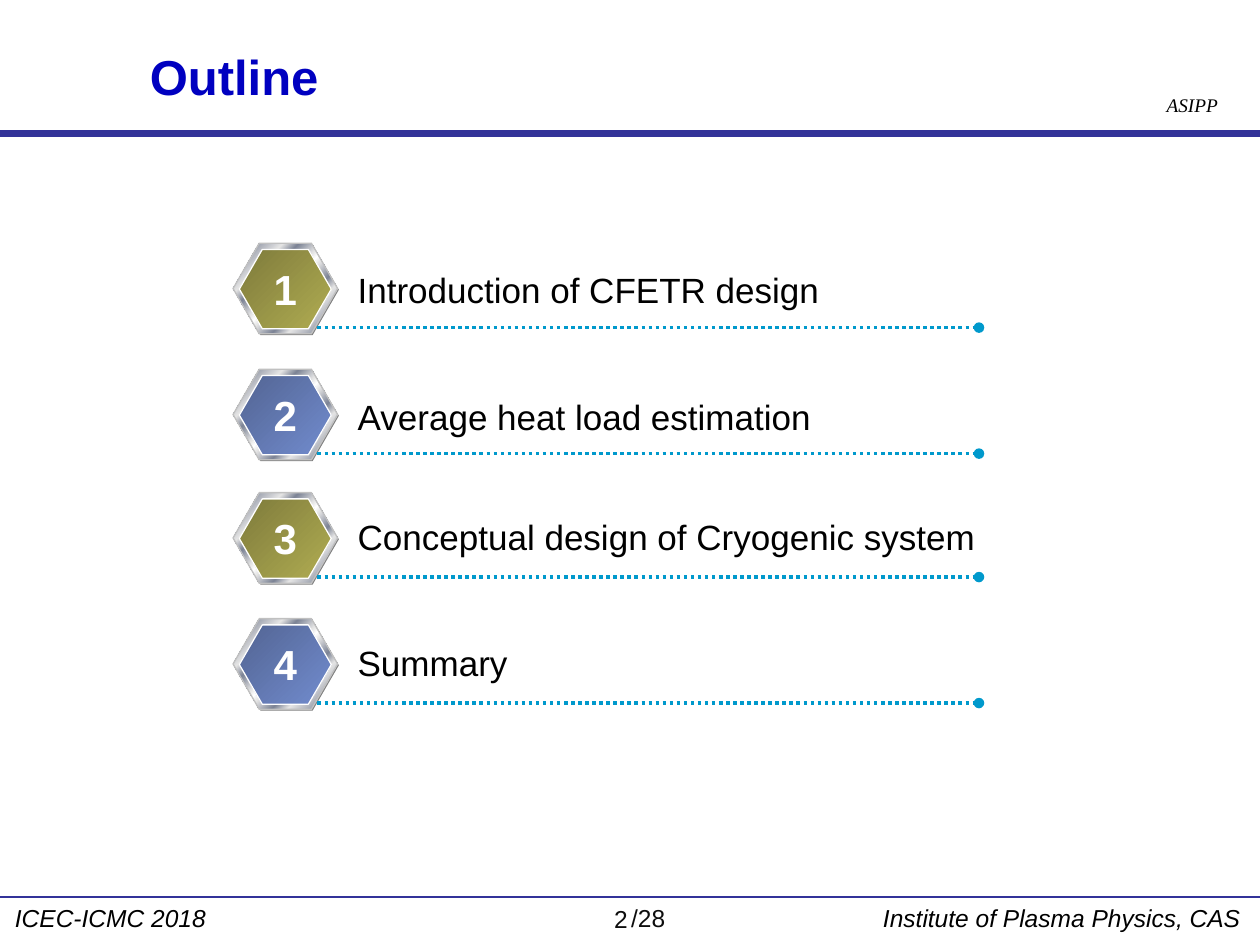
from lxml.etree import SubElement as Sub
from pptx import Presentation
from pptx.dml.color import RGBColor
from pptx.enum.dml import MSO_LINE as Dash
from pptx.enum.shapes import MSO_CONNECTOR as Conn, MSO_SHAPE as Shape
from pptx.enum.text import MSO_ANCHOR as Anchor, MSO_AUTO_SIZE as Fit, PP_ALIGN as Align
from pptx.oxml.ns import qn
from pptx.util import Inches, Pt

ROWS = [
    (1.93, 0.15, "Introduction of CFETR design", 3.9),
    (2.93, 0.16, "Average heat load estimation", 3.83),
    (3.91, 0.13, "Conceptual design of Cryogenic system", 5.14),
    (4.91, 0.13, "Summary", 1.4),
]
OLIVE = [(0, "7E7B3B"), (100, "B0AC52")]
BLUE = [(0, "526493"), (100, "728CCE")]
METAL = [
    (0, "E6E6E6"), (7, "7D8496"), (26, "E6E6E6"), (34, "7D8496"),
    (46, "E6E6E6"), (50, "FFFFFF"), (54, "E6E6E6"), (66, "7D8496"),
    (74, "E6E6E6"), (93, "7D8496"), (100, "E6E6E6"),
]


def rgb(code):
    """Turn a hex string into a colour."""
    return RGBColor.from_string(code)


def write(shape, text, size, color="000000", bold=False, italic=False,
          font="Arial", align=Align.LEFT, anchor=Anchor.TOP):
    """Put one formatted line of text in a shape."""
    frame = shape.text_frame
    frame.text = text
    frame.word_wrap = False
    frame.auto_size = Fit.SHAPE_TO_FIT_TEXT
    frame.vertical_anchor = anchor
    para = frame.paragraphs[0]
    para.alignment = align
    style = para.runs[0].font
    style.name, style.size = font, Pt(size)
    style.bold, style.italic = bold, italic
    style.color.rgb = rgb(color)


def label(slide, box, text, size, **style):
    """Add a text box holding one line."""
    write(slide.shapes.add_textbox(*map(Inches, box)), text, size, **style)


def rule(slide, left, right, top, color, width):
    """Add a level line without a shadow."""
    line = slide.shapes.add_connector(
        Conn.STRAIGHT, Inches(left), Inches(top), Inches(right), Inches(top))
    line.line.color.rgb = rgb(color)
    line.line.width = Pt(width)
    Sub(line._element.spPr, qn("a:effectLst"))
    return line


def dots(slide, top):
    """Add a dotted line ending in a round dot."""
    line = rule(slide, 2.52, 7.77, top, "0099CC", 2).line
    line.dash_style = Dash.ROUND_DOT
    Sub(line._get_or_add_ln(), qn("a:tailEnd"), type="oval")


def blend(shape, stops):
    """Fill a shape with a diagonal gradient."""
    shape.fill.gradient()
    grad = shape._element.spPr.find(qn("a:gradFill"))
    for child in list(grad):
        grad.remove(child)
    group = Sub(grad, qn("a:gsLst"))
    for place, color in stops:
        stop = Sub(group, qn("a:gs"), pos=str(place * 1000))
        Sub(stop, qn("a:srgbClr"), val=color)
    Sub(grad, qn("a:lin"), ang="2700000", scaled="0")


def hexagon(group, box, fill, edge=None):
    """Add a hexagon with a plain or gradient fill."""
    shape = group.shapes.add_shape(Shape.HEXAGON, *map(Inches, box))
    shape.adjustments[0] = 0.289
    shape.shadow.inherit = False
    if isinstance(fill, str):
        shape.fill.solid()
        shape.fill.fore_color.rgb = rgb(fill)
    else:
        blend(shape, fill)
    if edge:
        shape.line.color.rgb = rgb(edge)
        shape.line.width = Pt(0.75)
    else:
        shape.line.fill.background()


def entry(slide, num, top, drop, text, width):
    """Add one numbered outline row."""
    badge = slide.shapes.add_group_shape()
    hexagon(badge, (1.86, top + 0.01, 0.83, 0.72), "808080")
    hexagon(badge, (1.85, top, 0.83, 0.72), METAL, "C0C0C0")
    hexagon(badge, (1.9, top + 0.05, 0.73, 0.63), OLIVE if num % 2 else BLUE, "FFFFFF")
    dots(slide, top + 0.67)
    label(slide, (2.74, top + drop, width, 0.44), text, 20)
    label(slide, (2.07, top + 0.11, 0.39, 0.5), str(num), 24,
          color="FFFFFF", bold=True, align=Align.CENTER)


def heading(slide, text):
    """Place and format the title."""
    title = slide.shapes.title
    title.left, title.top, title.width, title.height = map(Inches, (1.09, 0.32, 1.56, 0.57))
    write(title, text, 28, color="0000C0", bold=True)


def frame(slide):
    """Add the header and footer."""
    rule(slide, 0, 10, 7.12, "333399", 0.75)
    rule(slide, 0, 10, 1.06, "333399", 3.5)
    label(slide, (9.16, 0.69, 0.65, 0.29), "ASIPP", 11, italic=True, font="Times New Roman")
    label(slide, (0.02, 7.12, 1.73, 0.34), "ICEC-ICMC 2018", 14, italic=True)
    label(slide, (4.53, 7.12, 0.55, 0.34), "2", 14, color="0D0D0D",
          align=Align.RIGHT, anchor=Anchor.MIDDLE)
    label(slide, (4.91, 7.12, 0.48, 0.34), "/28", 14, color="0D0D0D")
    label(slide, (6.91, 7.12, 3.06, 0.34), "Institute of Plasma Physics, CAS", 14, italic=True)


def main():
    """Build the outline slide."""
    deck = Presentation()
    deck.slide_width, deck.slide_height = Inches(10), Inches(7.5)
    slide = deck.slides.add_slide(deck.slide_layouts[5])
    frame(slide)
    heading(slide, "Outline")
    for num, row in enumerate(ROWS, 1):
        entry(slide, num, *row)
    deck.save("out.pptx")


if __name__ == "__main__":
    main()
